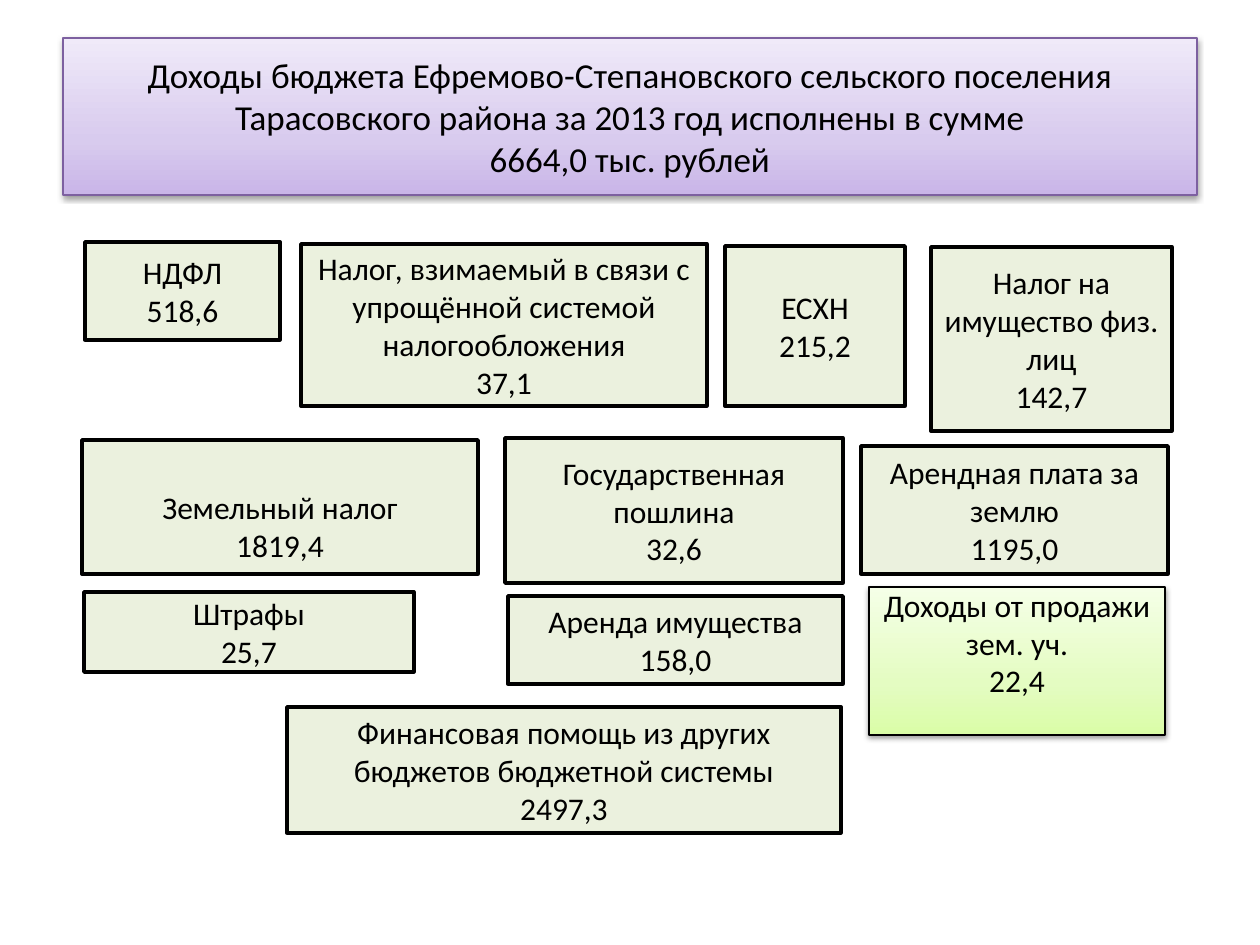
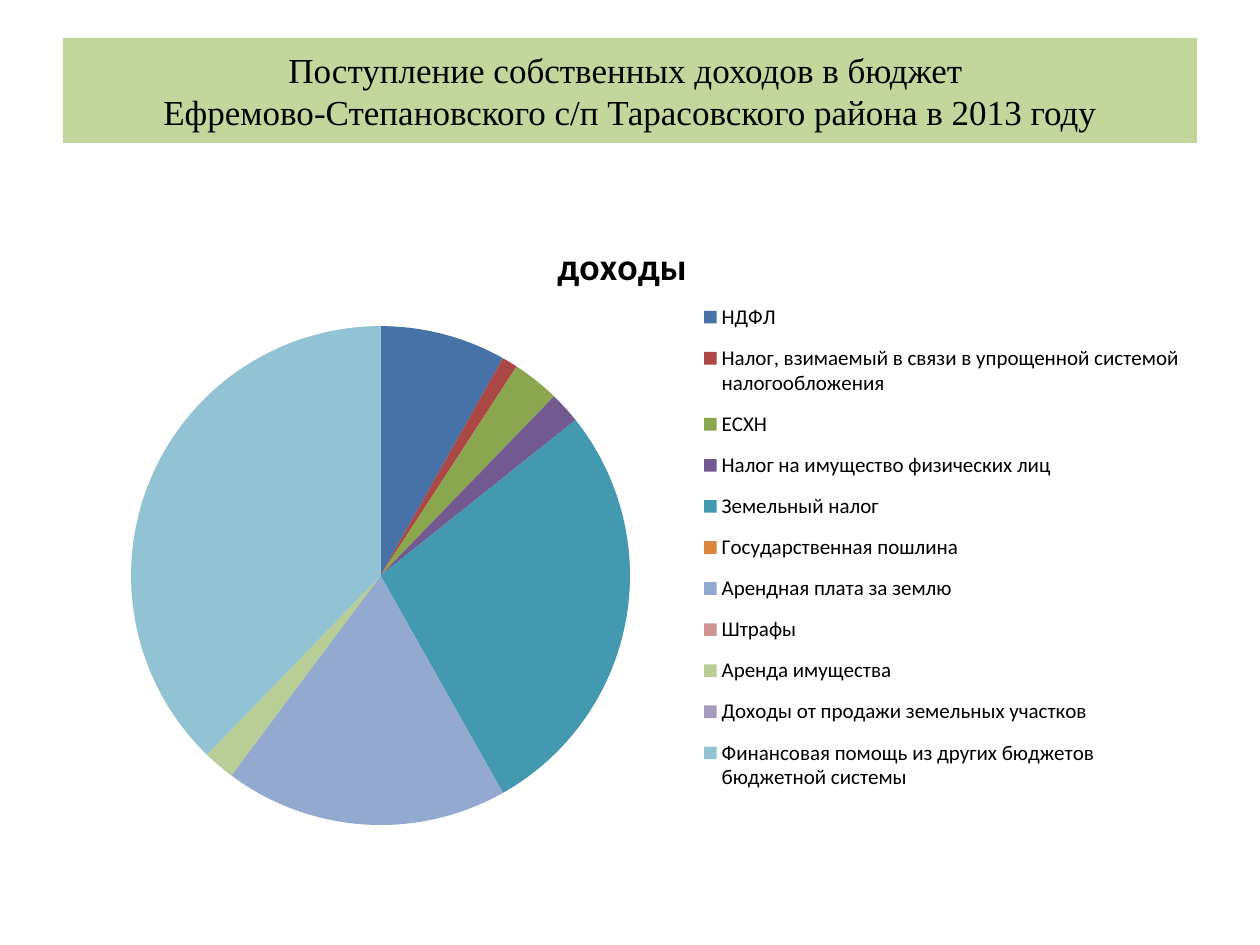
from copy import deepcopy

from lxml.etree import SubElement
from pptx import Presentation
from pptx.chart.data import CategoryChartData
from pptx.dml.color import RGBColor
from pptx.enum.chart import XL_CHART_TYPE as ChartType, XL_LEGEND_POSITION as LegendSide
from pptx.enum.shapes import MSO_SHAPE as Preset
from pptx.enum.text import MSO_ANCHOR as Anchor, PP_ALIGN as Align
from pptx.oxml.ns import qn
from pptx.util import Emu, Pt

PX = 914400 / 126
BLACK = RGBColor(0x00, 0x00, 0x00)
BOX_GREEN = RGBColor(0xEB, 0xF1, 0xDE)
BAND_GREEN = RGBColor(0xC3, 0xD6, 0x9B)
VIOLET = RGBColor(0x7D, 0x60, 0xA0)
LILAC_STOPS = [RGBColor(0xC9, 0xB5, 0xE8), RGBColor(0xD8, 0xCB, 0xEE), RGBColor(0xF0, 0xEA, 0xF9)]
LIME_STOPS = [RGBColor(0xDA, 0xFD, 0xA7), RGBColor(0xE4, 0xFC, 0xC2), RGBColor(0xF5, 0xFF, 0xE7)]
STOP_POSITIONS = [0, 0.35, 1]
BODY_FONT = "Calibri"
SERIF_FONT = "Times New Roman"
TITLE_LEFT, TITLE_TOP, TITLE_WIDTH = 63, 38, 1134

INCOME_BOXES = [
    ((85, 242, 195, 98), "НДФЛ", "518,6"),
    ((301, 244, 406, 162), "Налог, взимаемый в связи с упрощённой системой налогообложения", "37,1"),
    ((725, 246, 180, 160), "ЕСХН", "215,2"),
    ((931, 247, 241, 184), "Налог на имущество физ. лиц", "142,7"),
    ((505, 438, 338, 145), "Государственная пошлина", "32,6"),
    ((861, 446, 307, 128), "Арендная плата за землю", "1195,0"),
    ((84, 592, 330, 80), "Штрафы", "25,7"),
    ((287, 707, 554, 126), "Финансовая помощь из других бюджетов бюджетной системы", "2497,3"),
    ((508, 596, 335, 88), "Аренда имущества", "158,0"),
]

PIE_SLICES = [
    ("НДФЛ", 8, RGBColor(0x46, 0x72, 0xA8)),
    ("Налог, взимаемый в связи в упрощенной системой налогообложения", 1,
     RGBColor(0xAB, 0x47, 0x44)),
    ("ЕСХН", 3, RGBColor(0x8A, 0xA6, 0x4F)),
    ("Налог на имущество физических лиц", 2, RGBColor(0x72, 0x59, 0x90)),
    ("Земельный налог", 27, RGBColor(0x42, 0x99, 0xB0)),
    ("Государственная пошлина", 0, RGBColor(0xDC, 0x85, 0x3E)),
    ("Арендная плата за землю", 18, RGBColor(0x93, 0xA9, 0xCF)),
    ("Штрафы", 0, RGBColor(0xD1, 0x93, 0x92)),
    ("Аренда имущества", 2, RGBColor(0xB9, 0xCD, 0x96)),
    ("Доходы от продажи земельных участков", 0, RGBColor(0xA9, 0x9B, 0xBD)),
    ("Финансовая помощь из других бюджетов бюджетной системы", 37,
     RGBColor(0x91, 0xC3, 0xD5)),
]


def px(length):
    """Turn a length in px into EMU."""
    return Emu(round(length * PX))


def set_font(font, size, name=BODY_FONT, bold=False):
    """Give a font its size, family and black colour."""
    font.size = Pt(size)
    font.name = name
    font.bold = bold
    font.color.rgb = BLACK


def add_box(page, frame, lines, fill=BOX_GREEN, line=BLACK, line_width=2.0,
            size=18, font=BODY_FONT, margins=(6, 6)):
    """Add a rectangle with centred lines; margins are top and bottom."""
    box = page.shapes.add_shape(Preset.RECTANGLE, *map(px, frame))
    box.shadow.inherit = False
    box.fill.solid()
    box.fill.fore_color.rgb = fill
    if line is None:
        box.line.fill.background()
    else:
        box.line.color.rgb = line
        box.line.width = Pt(line_width)
    text = box.text_frame
    text.word_wrap = True
    text.vertical_anchor = Anchor.MIDDLE
    text.margin_top, text.margin_bottom = map(px, margins)
    for index, words in enumerate(lines):
        para = text.add_paragraph() if index else text.paragraphs[0]
        para.text = words
        para.alignment = Align.CENTER
        set_font(para.font, size, font)
    return box


def add_raised_gradient(box, colors):
    """Fill a box with a three-colour upward gradient and a soft shadow."""
    box.fill.gradient()
    box.fill.gradient_angle = 90
    properties = box.element.spPr
    stop_list = properties.find(qn("a:gradFill")).find(qn("a:gsLst"))
    stop_list.insert(1, deepcopy(stop_list[0]))
    for stop, position, color in zip(box.fill.gradient_stops, STOP_POSITIONS, colors):
        stop.position = position
        stop.color.rgb = color
    shadow = SubElement(properties.find(qn("a:effectLst")), qn("a:outerShdw"),
                        blurRad="40000", dist="20000", dir="5400000", rotWithShape="0")
    shade = SubElement(shadow, qn("a:srgbClr"), val=str(BLACK))
    SubElement(shade, qn("a:alpha"), val="38000")


def add_title(page, height, lines, **style):
    """Add the title band at the top of a page."""
    return add_box(page, (TITLE_LEFT, TITLE_TOP, TITLE_WIDTH, height), lines, size=20, **style)


def place_part(part, **fractions):
    """Fix a chart part at fractions of the chart area."""
    layout = part.find(qn("c:layout"))
    if layout is None:
        layout = part.makeelement(qn("c:layout"))
        before = part.find(qn("c:overlay"))
        if before is None:
            part.insert(0, layout)
        else:
            before.addprevious(layout)
    manual = SubElement(layout, qn("c:manualLayout"))
    if part.tag == qn("c:plotArea"):
        SubElement(manual, qn("c:layoutTarget"), val="inner")
    for axis in ("x", "y"):
        SubElement(manual, qn(f"c:{axis}Mode"), val="edge")
    for name, value in fractions.items():
        SubElement(manual, qn(f"c:{name}"), val=str(value))


def add_income_pie(page, frame):
    """Add the pie of incomes with its title and legend."""
    data = CategoryChartData()
    data.categories = [name for name, _, _ in PIE_SLICES]
    data.add_series("доходы", [value for _, value, _ in PIE_SLICES])
    chart = page.shapes.add_chart(ChartType.PIE, *map(px, frame), data).chart
    set_font(chart.font, 18)
    chart.has_title = True
    heading = chart.chart_title.text_frame
    heading.text = "доходы"
    set_font(heading.paragraphs[0].font, 21.6, bold=True)
    chart.has_legend = True
    chart.legend.position = LegendSide.RIGHT
    chart.legend.include_in_layout = False
    set_font(chart.legend.font, 12)
    plot = chart.plots[0]
    plot.vary_by_categories = True
    for index, (_, _, color) in enumerate(PIE_SLICES):
        fill = plot.series[0].points[index].format.fill
        fill.solid()
        fill.fore_color.rgb = color
    root = chart.element.find(qn("c:chart"))
    place_part(root.find(qn("c:title")), x=0.43, y=0.02)
    place_part(root.find(qn("c:plotArea")), x=0.06, y=0.17, w=0.44, h=0.8)
    place_part(root.find(qn("c:legend")), x=0.56, y=0.11, w=0.43, h=0.83)


def build_income_page(page):
    """Lay out the incomes by source."""
    title = add_title(page, 157, [
        "Доходы бюджета Ефремово-Степановского сельского поселения "
        "Тарасовского района за 2013 год исполнены в сумме",
        "6664,0 тыс. рублей"], line=VIOLET, line_width=0.75)
    add_raised_gradient(title, LILAC_STOPS)
    for frame, *lines in INCOME_BOXES:
        add_box(page, frame, lines)
    add_box(page, (82, 440, 396, 134), ["Земельный налог", "1819,4"], margins=(43, 6))
    land_sale = add_box(page, (869, 587, 296, 148), ["Доходы от продажи зем. уч.", "22,4"],
                        line_width=0.75, margins=(0, 37))
    add_raised_gradient(land_sale, LIME_STOPS)


def build_chart_page(page):
    """Lay out the chart of incomes."""
    add_title(page, 105, ["Поступление собственных доходов в бюджет ",
                          "Ефремово-Степановского с/п Тарасовского района в 2013 году"],
              fill=BAND_GREEN, line=None, font=SERIF_FONT)
    add_income_pie(page, (63, 220, 1134, 624))


def main():
    """Build and save the deck."""
    deck = Presentation()
    deck.slide_width, deck.slide_height = px(1260), px(945)
    for build_page in (build_income_page, build_chart_page):
        build_page(deck.slides.add_slide(deck.slide_layouts[6]))
    deck.save("out.pptx")


if __name__ == "__main__":
    main()
